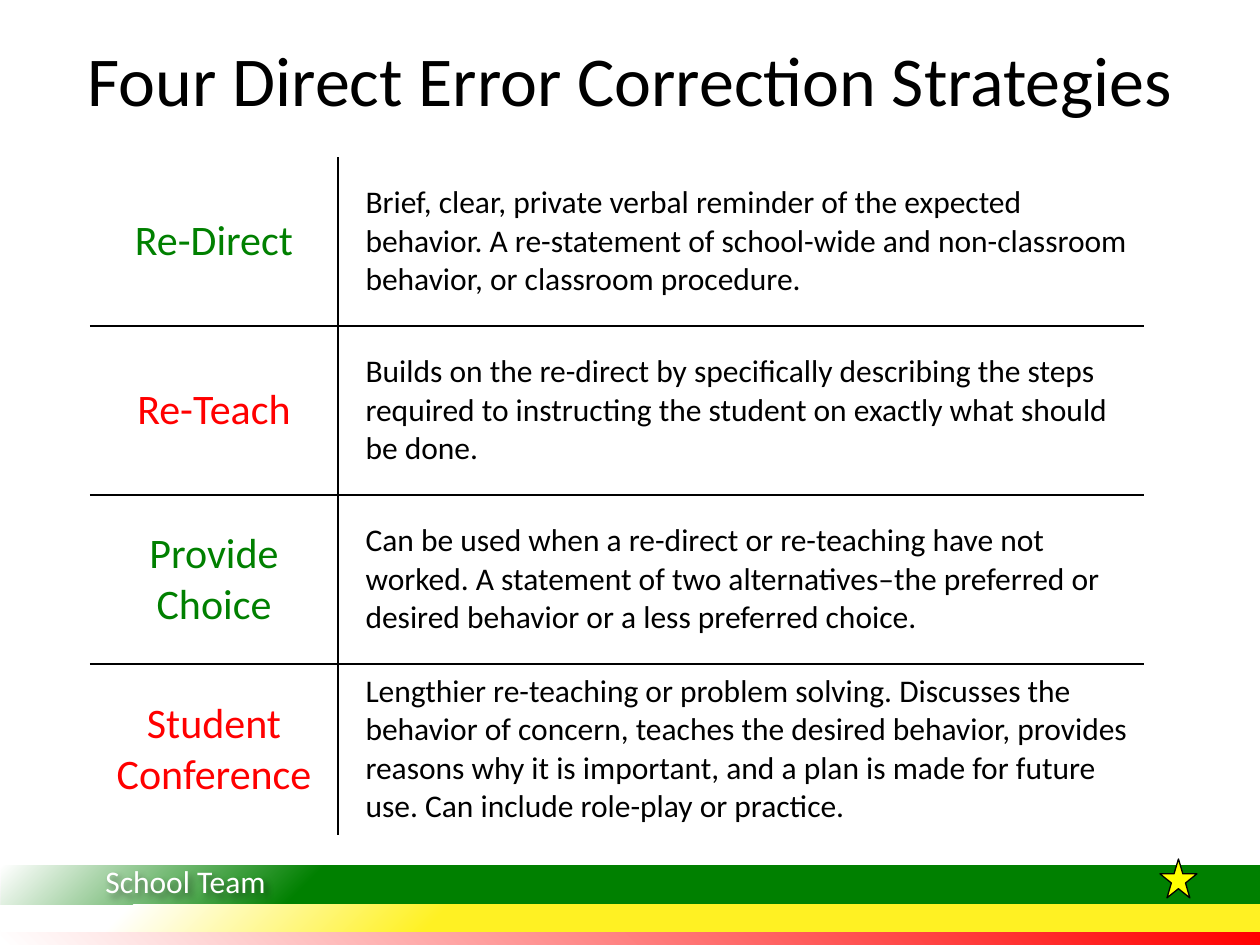
from typing import NamedTuple

from lxml.etree import SubElement
from pptx import Presentation
from pptx.dml.color import RGBColor
from pptx.enum.shapes import MSO_SHAPE
from pptx.enum.text import MSO_ANCHOR, PP_ALIGN
from pptx.oxml import parse_xml
from pptx.oxml.ns import nsdecls, qn
from pptx.util import Pt

EMU_PER_PX = 914400 / 126
FONT = "Calibri"
BLACK, WHITE, GREEN, RED, YELLOW = "000000", "FFFFFF", "008000", "FF0000", "FFF123"


class Band(NamedTuple):
    top: int
    height: int
    color: str
    color_stop: int  # percent
    white_stop: int
    focus: str  # corner where the colour is full


class Strategy(NamedTuple):
    name: str
    color: str
    description: str
    height: int


BOTTOM_RIGHT = 'l="100000" t="100000"'
TOP_RIGHT = 'l="100000" b="100000"'
BANDS = [
    Band(931, 15, RED, 0, 100, TOP_RIGHT),
    Band(866, 39, GREEN, 75, 100, BOTTOM_RIGHT),
    Band(905, 27, YELLOW, 65, 90, BOTTOM_RIGHT),
]
STRATEGIES = [
    Strategy("Re-Direct", GREEN,
             "Brief, clear, private verbal reminder of the expected behavior. "
             "A re-statement of school-wide and non-classroom behavior, or "
             "classroom procedure.", 169),
    Strategy("Re-Teach", RED,
             "Builds on the re-direct by specifically describing the steps "
             "required to instructing the student on exactly what should be done.", 169),
    Strategy("Provide Choice", GREEN,
             "Can be used when a re-direct or re-teaching have not worked. "
             "A statement of two alternatives–the preferred or desired behavior "
             "or a less preferred choice.", 169),
    Strategy("Student Conference", RED,
             "Lengthier re-teaching or problem solving. Discusses the behavior of "
             "concern, teaches the desired behavior, provides reasons why it is "
             "important, and a plan is made for future use. Can include role-play "
             "or practice.", 171),
]


def px(length: int) -> int:
    return round(length * EMU_PER_PX)


def rgb(color: str) -> RGBColor:
    return RGBColor.from_string(color)


def add_span(para, text: str, size: int, color: str) -> None:
    span = para.add_run()
    span.text = text
    span.font.name = FONT
    span.font.size = Pt(size)
    span.font.color.rgb = rgb(color)


def add_band(page, band: Band) -> None:
    shape = page.shapes.add_shape(
        MSO_SHAPE.RECTANGLE, px(1), px(band.top), px(1260), px(band.height))
    shape.shadow.inherit = False
    gradient = parse_xml(
        f'<a:gradFill {nsdecls("a")} rotWithShape="1"><a:gsLst>'
        f'<a:gs pos="{band.color_stop * 1000}"><a:srgbClr val="{band.color}"/></a:gs>'
        f'<a:gs pos="{band.white_stop * 1000}"><a:srgbClr val="{WHITE}"/></a:gs>'
        f'</a:gsLst><a:path path="circle"><a:fillToRect {band.focus}/></a:path>'
        '</a:gradFill>')
    shape.element.spPr.find(qn("a:prstGeom")).addnext(gradient)
    shape.line.fill.background()


def add_footer_label(page) -> None:
    box = page.shapes.add_textbox(px(93), px(856), px(242), px(50))
    box.text_frame.word_wrap = True
    add_span(box.text_frame.paragraphs[0], "School Team", 18, WHITE)
    # Soft shadow under the letters
    box.element.spPr.append(parse_xml(
        f'<a:effectLst {nsdecls("a")}><a:outerShdw blurRad="50800" dist="38100" '
        'dir="2700000" algn="tl"><a:srgbClr val="000000"><a:alpha val="40000"/>'
        '</a:srgbClr></a:outerShdw></a:effectLst>'))


def set_borders(cell, visible: set[str]) -> None:
    properties = cell._tc.get_or_add_tcPr()
    for position, side in enumerate(("lnL", "lnR", "lnT", "lnB")):
        line = properties.makeelement(qn(f"a:{side}"), {"w": str(Pt(1))})
        properties.insert(position, line)
        if side in visible:
            fill = SubElement(line, qn("a:solidFill"))
            SubElement(fill, qn("a:srgbClr"), val=BLACK)
        else:
            SubElement(line, qn("a:noFill"))


def fill_cell(cell, text: str, size: int, color: str, borders: set[str]):
    cell.fill.background()
    cell.vertical_anchor = MSO_ANCHOR.MIDDLE
    para = cell.text_frame.paragraphs[0]
    add_span(para, text, size, color)
    set_borders(cell, borders)
    return para


def add_strategy_table(page, strategies: list[Strategy]) -> None:
    widths = (248, 806)
    frame = page.shapes.add_table(
        len(strategies), 2, px(90), px(157), px(sum(widths)),
        px(sum(strategy.height for strategy in strategies)))
    table = frame.table
    table.first_row = table.horz_banding = False
    for column, width in zip(table.columns, widths):
        column.width = px(width)
    last = len(strategies) - 1
    for index, strategy in enumerate(strategies):
        table.rows[index].height = px(strategy.height)
        # Only the inner grid lines are drawn
        rules = {"lnT"} if index > 0 else set()
        if index < last:
            rules.add("lnB")
        name = fill_cell(table.cell(index, 0), strategy.name, 24,
                         strategy.color, rules | {"lnR"})
        name.alignment = PP_ALIGN.CENTER
        description = fill_cell(table.cell(index, 1), strategy.description, 18,
                                BLACK, rules | {"lnL"})
        description._p.get_or_add_pPr().set("marL", str(px(15)))


def add_star(page) -> None:
    star = page.shapes.add_shape(
        MSO_SHAPE.STAR_5_POINT, px(1160), px(859), px(37), px(39))
    star.shadow.inherit = False
    star.fill.solid()
    star.fill.fore_color.rgb = rgb("FFFF00")
    star.line.color.rgb = rgb(BLACK)
    star.line.width = Pt(0.75)


def set_title(page, text: str) -> None:
    title = page.shapes.title
    title.left, title.top, title.width, title.height = px(63), px(0), px(1134), px(157)
    title.text_frame.vertical_anchor = MSO_ANCHOR.MIDDLE
    para = title.text_frame.paragraphs[0]
    para.alignment = PP_ALIGN.CENTER
    add_span(para, text, 40, BLACK)


def main() -> None:
    deck = Presentation()
    deck.slide_width, deck.slide_height = px(1260), px(945)
    page = deck.slides.add_slide(deck.slide_layouts[5])

    # Footer bands and label
    for band in BANDS:
        add_band(page, band)
    add_footer_label(page)

    # Title, table and star
    set_title(page, "Four Direct Error Correction Strategies")
    add_strategy_table(page, STRATEGIES)
    add_star(page)

    deck.save("out.pptx")


if __name__ == "__main__":
    main()
